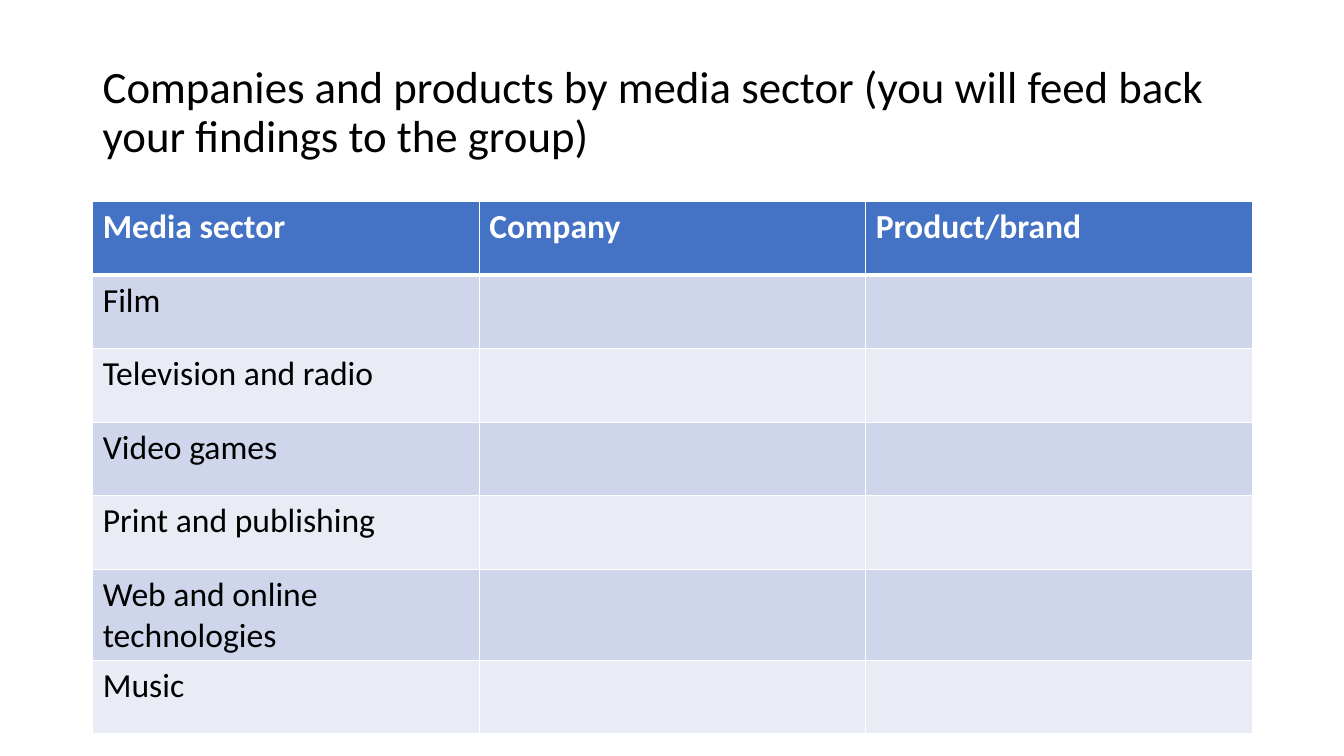
from dataclasses import dataclass

from lxml.etree import SubElement
from pptx import Presentation
from pptx.dml.color import RGBColor
from pptx.enum.text import MSO_ANCHOR
from pptx.oxml.ns import qn
from pptx.util import Inches, Pt


@dataclass(frozen=True)
class Theme:
    font: str = "Calibri"
    title: int = 32
    body: int = 24
    ink: str = "000000"
    white: str = "FFFFFF"
    head: str = "4472C4"
    bands: tuple = ("E9EBF5", "CFD5EA")
    thin: int = 1
    thick: int = 3


theme = Theme()


def style(para, size, color, bold=False):
    for run in para.runs:
        font = run.font
        font.name, font.size, font.bold = theme.font, Pt(size), bold
        font.color.rgb = RGBColor.from_string(color)


def edge(cell, side, width):
    """Draw a white border on one side (L, R, T or B) of a cell."""
    props = cell._tc.get_or_add_tcPr()
    line = SubElement(props, qn(f"a:ln{side}"), w=str(Pt(width)))
    fill = SubElement(line, qn("a:solidFill"))
    SubElement(fill, qn("a:srgbClr"), val=theme.white)


deck = Presentation()
deck.slide_width, deck.slide_height = Inches(13.33), Inches(7.5)
slide = deck.slides.add_slide(deck.slide_layouts[6])

# Title
box = slide.shapes.add_textbox(Inches(0.92), Inches(0.4), Inches(11.5), Inches(1.45))
frame = box.text_frame
frame.word_wrap = True
frame.vertical_anchor = MSO_ANCHOR.MIDDLE
frame.text = "Companies and products by media sector (you will feed back your findings to the group)"
frame.paragraphs[0].line_spacing = 0.9
style(frame.paragraphs[0], theme.title, theme.ink)

# Table: a header row, then one row per sector with blank cells to fill in
heads = ["Media sector", "Company", "Product/brand"]
sectors = ["Film", "Television and radio", "Video games", "Print and publishing",
           "Web and online technologies", "Music"]
rows = [heads] + [[name, "", ""] for name in sectors]

grid = slide.shapes.add_table(len(rows), len(heads), Inches(0.92), Inches(2),
                              Inches(11.5), Inches(5.11)).table
for col in grid.columns:
    col.width = Inches(11.5 / len(heads))

for r, words in enumerate(rows):
    grid.rows[r].height = Inches(0.73)
    top = r == 0
    for c, word in enumerate(words):
        cell = grid.cell(r, c)
        for side in "LRTB":
            rule = (r, side) in ((0, "B"), (1, "T"))
            edge(cell, side, theme.thick if rule else theme.thin)
        cell.fill.solid()
        shade = theme.head if top else theme.bands[r % 2]
        cell.fill.fore_color.rgb = RGBColor.from_string(shade)
        if word:
            cell.text_frame.text = word
            style(cell.text_frame.paragraphs[0], theme.body,
                  theme.white if top else theme.ink, top)

deck.save("out.pptx")
